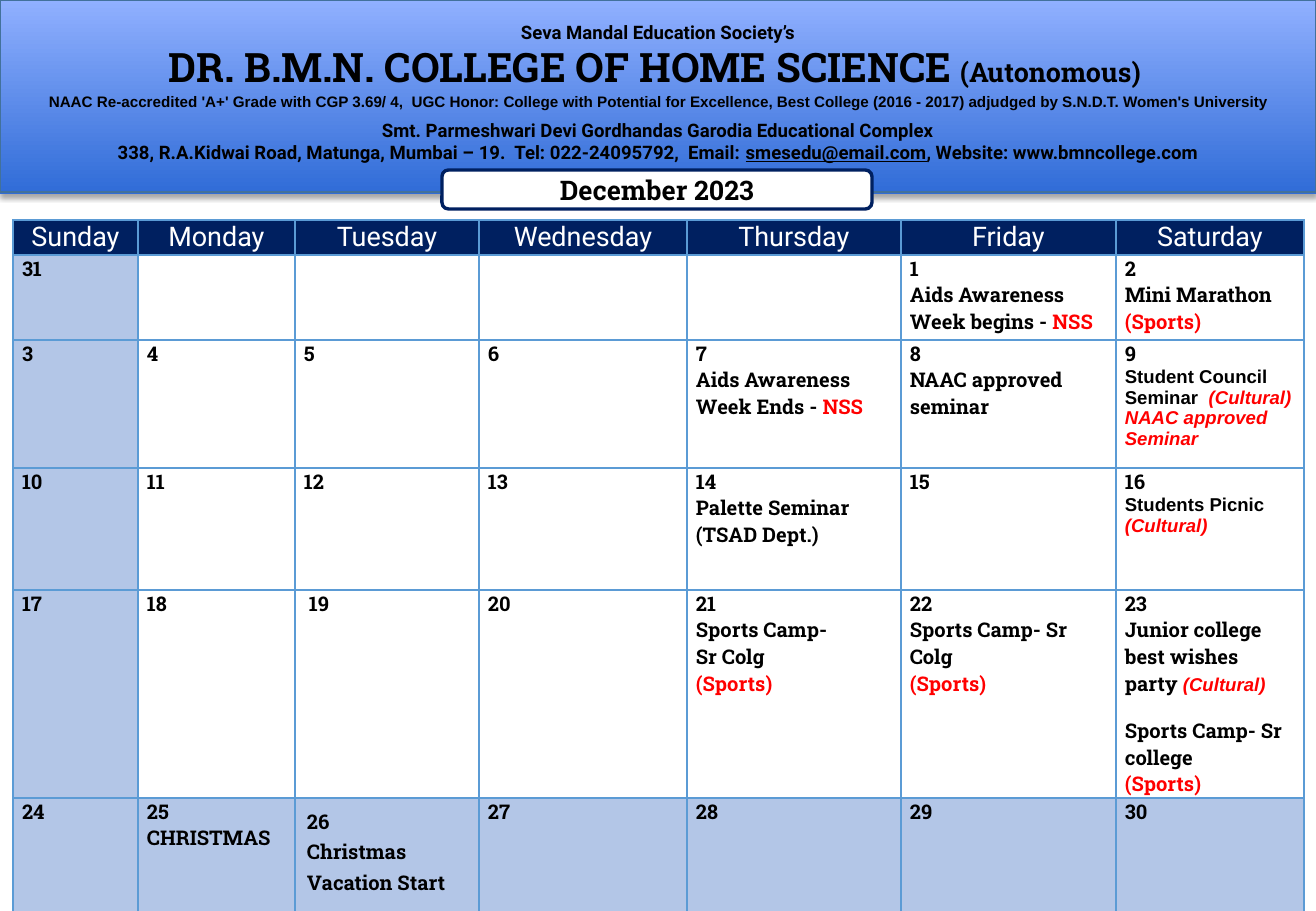
from dataclasses import dataclass, replace

from lxml.etree import SubElement
from pptx import Presentation
from pptx.dml.color import RGBColor
from pptx.enum.shapes import MSO_SHAPE as Shape
from pptx.enum.text import MSO_ANCHOR as Anchor, MSO_AUTO_SIZE as AutoSize, PP_ALIGN as Align
from pptx.oxml.ns import qn
from pptx.util import Pt

PX = 7526
BLACK = RGBColor(0x00, 0x00, 0x00)
WHITE = RGBColor(0xFF, 0xFF, 0xFF)
RED = RGBColor(0xFF, 0x00, 0x00)
NAVY = RGBColor(0x00, 0x20, 0x60)
SHADE = RGBColor(0xB3, 0xC6, 0xE7)
GRID = RGBColor(0x5B, 0x9B, 0xD5)
EDGE = RGBColor(0x42, 0x71, 0x9B)
BANNER_DARK = RGBColor(0x30, 0x6C, 0xD7)
BANNER_LIGHT = RGBColor(0x90, 0xB0, 0xFF)


@dataclass(frozen=True)
class Style:
    name: str
    size: int
    color: RGBColor = BLACK
    bold: bool = True
    italic: bool = False
    underline: bool = False

    def apply(self, font):
        font.name, font.size = self.name, Pt(self.size)
        font.bold, font.italic, font.underline = self.bold, self.italic, self.underline
        font.color.rgb = self.color


@dataclass
class Line:
    runs: list
    spacing: float = None
    before: int = 0


ADDRESS = Style("Roboto", 11)
COLLEGE = Style("Roboto Slab", 24)
MONTH = Style("Roboto Slab", 16)
WEEKDAY = Style("Roboto", 16, WHITE, bold=False)
EVENT = Style("Roboto Slab", 12)
TEAM = replace(EVENT, color=RED)
SMALL = Style("Arial", 11)
CULTURAL = replace(SMALL, color=RED, italic=True)

BANNER = [
    Line([("Seva Mandal Education Society’s", ADDRESS)], 0.5),
    Line([("DR. B.M.N. COLLEGE OF HOME SCIENCE", COLLEGE),
          (" ", replace(COLLEGE, size=20)), ("(Autonomous) ", MONTH)], 1.0),
    Line([("NAAC Re-accredited 'A+' Grade with CGP 3.69/ 4,  UGC Honor: College with "
           "Potential for Excellence, Best College (2016 - 2017) adjudged by "
           "S.N.D.T. Women's University", replace(SMALL, size=9))], 1.1),
    Line([("Smt. Parmeshwari Devi Gordhandas Garodia Educational Complex", ADDRESS)], 1.0, 5),
    Line([("338, R.A.Kidwai Road, Matunga, Mumbai – 19.  Tel: 022-24095792,  Email: ", ADDRESS),
          ("smesedu@email.com", replace(ADDRESS, underline=True)),
          (", Website: www.bmncollege.com", ADDRESS)], 1.0),
]
WEEKDAYS = ["Sunday", "Monday", "Tuesday", "Wednesday", "Thursday", "Friday", "Saturday"]
COLUMN_WIDTHS = [125, 157, 184, 208, 214, 215, 188]
ROW_HEIGHTS = [35, 85, 128, 122, 208, 117]
SPORTS = Line([("(Sports)", TEAM)])
EVENTS = {
    1: [Line([("Aids Awareness Week begins - ", EVENT), ("NSS", TEAM)])],
    2: [Line([("Mini Marathon ", EVENT), ("(Sports)", TEAM)])],
    7: [Line([("Aids Awareness Week Ends - ", EVENT), ("NSS", TEAM)])],
    8: [Line([("NAAC approved seminar", EVENT)])],
    9: [Line([("Student Council Seminar  ", SMALL), ("(Cultural)", CULTURAL)]),
        Line([("NAAC approved Seminar", CULTURAL)])],
    14: [Line([("Palette Seminar (TSAD Dept.)", EVENT)])],
    16: [Line([("Students Picnic ", SMALL), ("(Cultural)", CULTURAL)])],
    21: [Line([("Sports Camp-", EVENT)]), Line([("Sr Colg", EVENT)]), SPORTS],
    22: [Line([("Sports Camp- Sr Colg", EVENT)]), SPORTS],
    23: [Line([("Junior college best wishes party ", EVENT), ("(Cultural)", CULTURAL)]),
         Line([("Sports Camp- Sr college", EVENT)], before=12), SPORTS],
    25: [Line([("CHRISTMAS", EVENT)])],
    26: [Line([("Christmas Vacation Start", EVENT)], 1.15)],
}


class CalendarPage:
    def __init__(self, deck):
        self.page = deck.slides.add_slide(deck.slide_layouts[5])

    def add_lines(self, frame, lines, align=Align.LEFT):
        for index, line in enumerate(lines):
            para = frame.add_paragraph() if index else frame.paragraphs[0]
            para.alignment = align
            para.space_before = Pt(line.before)
            if line.spacing:
                para.line_spacing = line.spacing
            base = line.runs[0][1]
            base.apply(para.font)
            for text, style in line.runs:
                span = para.add_run()
                span.text = text
                if style != base:
                    style.apply(span.font)

    def inset(self, target, across, down):
        target.margin_left = target.margin_right = across * PX
        target.margin_top = target.margin_bottom = down * PX

    def banner(self, width, height, lines):
        title = self.page.shapes.title
        title.left, title.top, title.width, title.height = 0, 0, width * PX, height * PX
        title.fill.gradient()
        title.fill.gradient_angle = 90
        for stop, color, position in zip(title.fill.gradient_stops,
                                         (BANNER_DARK, BANNER_LIGHT), (0, 1)):
            stop.color.rgb, stop.position = color, position
        effects = SubElement(title.element.spPr, qn("a:effectLst"))
        shadow = SubElement(effects, qn("a:outerShdw"), blurRad=str(Pt(3.1)),
                            dist=str(Pt(1.8)), dir="5400000", rotWithShape="0")
        tint = SubElement(shadow, qn("a:srgbClr"), val=str(BLACK))
        SubElement(tint, qn("a:alpha"), val="35000")
        frame = title.text_frame
        frame.auto_size, frame.word_wrap = AutoSize.NONE, True
        frame.vertical_anchor = Anchor.MIDDLE
        self.inset(frame, 12, 6)
        self.add_lines(frame, lines, Align.CENTER)

    def box(self, kind, left, top, width, height, line, weight, fill=None, lines=()):
        box = self.page.shapes.add_shape(kind, left * PX, top * PX, width * PX, height * PX)
        box.shadow.inherit = False
        self.paint(box.fill, fill)
        box.line.color.rgb, box.line.width = line, Pt(weight)
        box.text_frame.vertical_anchor = Anchor.MIDDLE
        self.add_lines(box.text_frame, lines, Align.CENTER)

    def paint(self, fill, color):
        if color is None:
            fill.background()
        else:
            fill.solid()
            fill.fore_color.rgb = color

    def grid(self, left, top, widths, heights):
        table = self.page.shapes.add_table(len(heights), len(widths), left * PX, top * PX,
                                           sum(widths) * PX, sum(heights) * PX).table
        table.first_row = table.horz_banding = False
        for column, width in zip(table.columns, widths):
            column.width = width * PX
        for row, height in zip(table.rows, heights):
            row.height = height * PX
        return table

    def cell(self, cell, lines, fill=None, align=Align.LEFT, anchor=Anchor.TOP, inset=(9, 0)):
        self.inset(cell, *inset)
        cell.vertical_anchor = anchor
        for side in ("a:lnL", "a:lnR", "a:lnT", "a:lnB"):
            border = SubElement(cell._tc.get_or_add_tcPr(), qn(side), w=str(Pt(1)))
            solid = SubElement(border, qn("a:solidFill"))
            SubElement(solid, qn("a:srgbClr"), val=str(GRID))
        self.paint(cell.fill, fill)
        self.add_lines(cell.text_frame, lines, align)


def day_lines(day):
    if day < 1:
        return []
    label = f" {day}" if day == 19 else str(day)
    return [Line([(label, EVENT)], 1.15 if day == 26 else None)] + EVENTS.get(day, [])


def main():
    deck = Presentation()
    deck.slide_width, deck.slide_height = 1316 * PX, 911 * PX
    calendar = CalendarPage(deck)
    calendar.banner(1316, 194, BANNER)
    calendar.box(Shape.RECTANGLE, 0, 0, 1316, 192, EDGE, 1)
    calendar.box(Shape.FLOWCHART_ALTERNATE_PROCESS, 442, 170, 430, 39, NAVY, 2, WHITE,
                 [Line([("December 2023", MONTH)])])
    table = calendar.grid(13, 220, COLUMN_WIDTHS, ROW_HEIGHTS)
    for column, weekday in enumerate(WEEKDAYS):
        calendar.cell(table.cell(0, column), [Line([(weekday, WEEKDAY)])], NAVY,
                      Align.CENTER, Anchor.MIDDLE)
        for week in range(5):
            day = 31 if week == column == 0 else week * 7 + column - 4
            shaded = column == 0 or week == 4
            calendar.cell(table.cell(week + 1, column), day_lines(day),
                          SHADE if shaded else None, inset=(12, 6) if day == 26 else (9, 0))
    deck.save("out.pptx")


if __name__ == "__main__":
    main()
